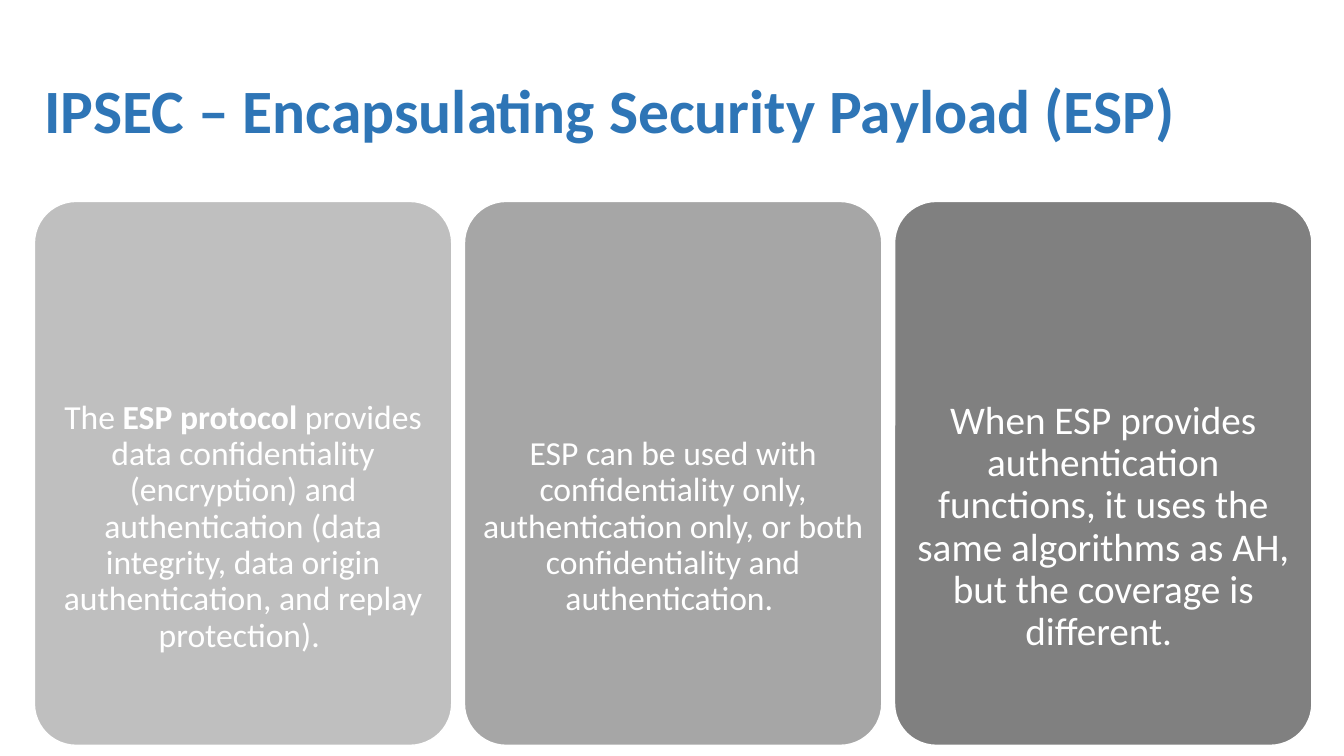
from pptx import Presentation
from pptx.dml.color import RGBColor
from pptx.enum.shapes import MSO_SHAPE as Shape
from pptx.enum.text import MSO_ANCHOR as Anchor, PP_ALIGN as Align
from pptx.util import Pt

BLUE = RGBColor(0x2E, 0x75, 0xB6)
WHITE = RGBColor(0xFF, 0xFF, 0xFF)
LIGHT_GREY = RGBColor(0xBF, 0xBF, 0xBF)
MID_GREY = RGBColor(0xA6, 0xA6, 0xA6)
DARK_GREY = RGBColor(0x80, 0x80, 0x80)

TITLE = "IPSEC – Encapsulating Security Payload (ESP)"
# Each card: fill, text size, runs of (text, bold)
CARDS = [
    (LIGHT_GREY, 24, [
        ("The ", False),
        ("ESP protocol", True),
        (" provides data confidentiality (encryption) and authentication "
         "(data integrity, data origin authentication, and replay protection). ", False),
    ]),
    (MID_GREY, 24, [
        ("ESP can be used with confidentiality only, authentication only, "
         "or both confidentiality and authentication. ", False),
    ]),
    (DARK_GREY, 28, [
        ("When ESP provides authentication functions, it uses the same "
         "algorithms as AH, but the coverage is different. ", False),
    ]),
]

LEFT, CARD_TOP = 24.6, 143.9
CARD_WIDTH, CARD_HEIGHT, CARD_GAP = 298.1, 388.5, 9.1
CARD_MARGINS = (2.8, 157.6, 2.8, 80.6)
TITLE_MARGINS = (7.2, 3.6, 7.2, 3.6)


def write(box, runs, size, color, align, margins):
    """Fill the box with one middle-anchored paragraph of (text, bold) runs."""
    frame = box.text_frame
    frame.word_wrap = True
    frame.vertical_anchor = Anchor.MIDDLE
    (frame.margin_left, frame.margin_top,
     frame.margin_right, frame.margin_bottom) = map(Pt, margins)
    para = frame.paragraphs[0]
    para.alignment = align
    para.line_spacing = 0.9
    for text, bold in runs:
        span = para.add_run()
        span.text = text
        span.font.name = "Calibri"
        span.font.size = Pt(size)
        span.font.bold = bold
        span.font.color.rgb = color


def add_card(page, left, fill, size, runs):
    card = page.shapes.add_shape(Shape.ROUNDED_RECTANGLE, Pt(left), Pt(CARD_TOP),
                                 Pt(CARD_WIDTH), Pt(CARD_HEIGHT))
    card.adjustments[0] = 0.1
    card.shadow.inherit = False
    card.fill.solid()
    card.fill.fore_color.rgb = fill
    card.line.color.rgb = WHITE
    card.line.width = Pt(1)
    write(card, runs, size=size, color=WHITE, align=Align.CENTER, margins=CARD_MARGINS)


def main():
    deck = Presentation()
    deck.slide_width, deck.slide_height = Pt(960), Pt(540)
    page = deck.slides.add_slide(deck.slide_layouts[6])

    title = page.shapes.add_textbox(Pt(LEFT), Pt(28.8), Pt(913), Pt(104.4))
    write(title, [(TITLE, True)], size=44, color=BLUE, align=Align.LEFT,
          margins=TITLE_MARGINS)

    for column, (fill, size, runs) in enumerate(CARDS):
        add_card(page, LEFT + column * (CARD_WIDTH + CARD_GAP), fill, size, runs)

    deck.save("out.pptx")


if __name__ == "__main__":
    main()
